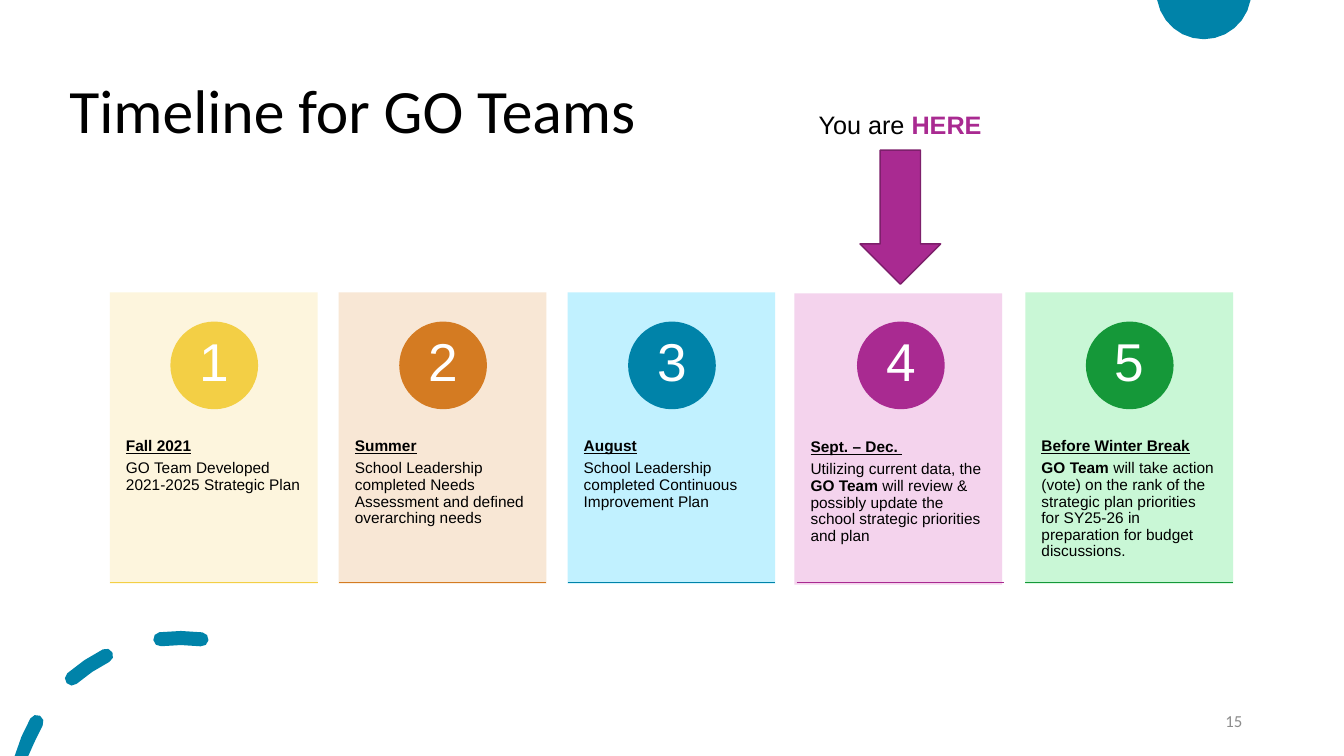
"""Build the GO Teams timeline slide."""
from math import cos, radians, sin

from lxml import etree
from pptx import Presentation
from pptx.dml.color import RGBColor
from pptx.enum.shapes import MSO_CONNECTOR, MSO_SHAPE
from pptx.enum.text import MSO_ANCHOR, MSO_AUTO_SIZE, PP_ALIGN
from pptx.oxml.ns import qn
from pptx.util import Inches, Pt

RECTANGLE, OVAL, DOWN_ARROW = MSO_SHAPE.RECTANGLE, MSO_SHAPE.OVAL, MSO_SHAPE.DOWN_ARROW
STRAIGHT = MSO_CONNECTOR.STRAIGHT
TOP, MIDDLE = MSO_ANCHOR.TOP, MSO_ANCHOR.MIDDLE
FIXED, GROW = MSO_AUTO_SIZE.NONE, MSO_AUTO_SIZE.SHAPE_TO_FIT_TEXT
LEFT, CENTER, RIGHT = PP_ALIGN.LEFT, PP_ALIGN.CENTER, PP_ALIGN.RIGHT

COLORS = {
    "black": "000000", "white": "FFFFFF", "gray": "8C8C8C",
    "yellow": "F3CF45", "pale yellow": "FDF5DA",
    "orange": "D47B22", "pale orange": "F8E5D1",
    "blue": "0083A9", "pale blue": "BBF0FF",
    "purple": "A92A91", "pale purple": "F3CFEC", "dark purple": "7D1F6B",
    "green": "159839", "pale green": "C4F7D2",
}
SLIDE_WIDTH, SLIDE_HEIGHT = 13.33, 7.5
CARD_LEFT, CARD_TOP, CARD_PITCH = 1.09, 2.9, 2.27
CARD_WIDTH, CARD_HEIGHT = 2.06, 2.89
CIRCLE_SIZE, NUMBER_SIZE = 0.87, 0.61
HEADING = {"bold": True, "underline": True}
BOLD = {"bold": True}

STEPS = [
    ("yellow", "Fall 2021", [("GO Team Developed 2021-2025 Strategic Plan", {})], (0, 0)),
    ("orange", "Summer",
     [("School Leadership completed Needs Assessment and defined overarching needs", {})], (0, 0)),
    ("blue", "August",
     [("School Leadership completed Continuous Improvement Plan", {})], (0, 0)),
    ("purple", "Sept. – Dec. ",
     [("Utilizing current data, the ", {}), ("GO Team ", BOLD),
      ("will review & possibly update the school strategic priorities and plan", {})],
     (-0.02, 0.01)),
    ("green", "Before Winter Break",
     [("GO Team ", BOLD),
      ("will take action (vote) on the rank of the strategic plan priorities "
       "for SY25-26 in preparation for budget discussions.", {})], (0, 0)),
]


def rgb(name):
    """Return the named colour."""
    return RGBColor.from_string(COLORS[name])


def paint(shape, fill, line=None, opacity=None):
    """Set fill, outline and opacity, without a shadow."""
    shape.shadow.inherit = False
    shape.fill.solid()
    shape.fill.fore_color.rgb = rgb(fill)
    if opacity:
        color = shape.fill._xPr.find(qn("a:solidFill"))[0]
        etree.SubElement(color, qn("a:alpha"), val=str(opacity * 1000))
    if line:
        shape.line.color.rgb = rgb(line)
        shape.line.width = Pt(1)
    else:
        shape.line.fill.background()


def add_preset(slide, kind, box, fill, **style):
    """Add a painted preset shape."""
    shape = slide.shapes.add_shape(kind, *map(Inches, box))
    paint(shape, fill, **style)


def add_text(slide, box, paragraphs, size, font="Arial", color="black", align=LEFT,
             anchor=TOP, insets=(0.1, 0.05), line_spacing=1.0, space_after=0, fit=FIXED):
    """Add a text box from paragraphs of (text, format) runs."""
    frame = slide.shapes.add_textbox(*map(Inches, box)).text_frame
    frame.word_wrap = True
    frame.auto_size = fit
    frame.vertical_anchor = anchor
    frame.margin_left = frame.margin_right = Inches(insets[0])
    frame.margin_top = frame.margin_bottom = Inches(insets[1])
    for index, runs in enumerate(paragraphs):
        paragraph = frame.add_paragraph() if index else frame.paragraphs[0]
        paragraph.alignment = align
        paragraph.line_spacing = line_spacing
        paragraph.space_after = Pt(space_after)
        for text, style in runs:
            run = paragraph.add_run()
            run.text = text
            run.font.name = font
            run.font.size = Pt(size)
            run.font.bold = style.get("bold", False)
            run.font.underline = style.get("underline", False)
            run.font.color.rgb = rgb(style.get("color", color))


def add_rule(slide, left, top, width, color):
    """Add a thin horizontal line."""
    line = slide.shapes.add_connector(
        STRAIGHT, Inches(left), Inches(top), Inches(left + width), Inches(top))
    line.line.color.rgb = rgb(color)
    line.line.width = Pt(1)
    etree.SubElement(line._element.spPr, qn("a:effectLst"))


def arc(center, radius, start, end, steps=4):
    """Return points on an arc, with degrees clockwise from the top."""
    angles = [radians(start + (end - start) * step / steps) for step in range(steps + 1)]
    return [(center[0] + radius * sin(angle), center[1] - radius * cos(angle))
            for angle in angles]


def dash_contour(center, radius, half_width, start, end):
    """Return the contour of a curved dash with round ends."""
    start_center = arc(center, radius, start, start, 1)[0]
    end_center = arc(center, radius, end, end, 1)[0]
    return (arc(center, radius + half_width, start, end, 2)
            + arc(end_center, half_width, end, end + 180)[1:-1]
            + arc(center, radius - half_width, end, start, 2)
            + arc(start_center, half_width, start + 180, start + 360)[1:-1])


def add_outline(slide, contours, color):
    """Add one filled freeform of closed contours within the slide height."""
    contours = [[(Inches(x), Inches(min(max(y, 0), SLIDE_HEIGHT))) for x, y in contour]
                for contour in contours]
    builder = slide.shapes.build_freeform(*contours[0][0])
    for index, contour in enumerate(contours):
        if index:
            builder.move_to(*contour[0])
        builder.add_line_segments(contour[1:], close=True)
    paint(builder.convert_to_shape(), color)


def add_step(slide, index, color, heading, body, shift):
    """Add one numbered timeline card."""
    column = CARD_LEFT + index * CARD_PITCH
    left, top = column + shift[0], CARD_TOP + shift[1]
    add_preset(slide, RECTANGLE, (left, top, CARD_WIDTH, CARD_HEIGHT),
               "pale " + color, opacity=90)
    add_text(slide, (left, top + 1.09, CARD_WIDTH, 1.73), [[(heading, HEADING)], body],
             11, insets=(0.16, 0.36), line_spacing=0.9, space_after=3.85)
    circle_left = column + 0.6
    add_preset(slide, OVAL, (circle_left, 3.19, CIRCLE_SIZE, CIRCLE_SIZE), color)
    inset = (CIRCLE_SIZE - NUMBER_SIZE) / 2
    add_text(slide, (circle_left + inset, 3.18 + inset, NUMBER_SIZE, NUMBER_SIZE),
             [[(str(index + 1), {})]], 38, color="white", align=CENTER, anchor=MIDDLE,
             insets=(0.07, 0.01), line_spacing=0.9)
    add_rule(slide, column, 5.78, CARD_WIDTH, color)


def main():
    """Build and save the slide."""
    presentation = Presentation()
    presentation.slide_width = Inches(SLIDE_WIDTH)
    presentation.slide_height = Inches(SLIDE_HEIGHT)
    slide = presentation.slides.add_slide(presentation.slide_layouts[6])
    add_outline(slide, [arc((11.94, -0.08), 0.47, 100, 260, 12)], "blue")
    dash_angles = ((-74, -60.5), (-41, -26.7), (-7, 7.3))
    add_outline(slide, [dash_contour((1.79, 7.97), 1.64, 0.07, start, end)
                        for start, end in dash_angles], "blue")
    add_text(slide, (0.59, 0.4, 11.5, 1.45), [[("Timeline for GO Teams", {})]], 44,
             font="Calibri", anchor=MIDDLE, line_spacing=0.9)
    for index, step in enumerate(STEPS):
        add_step(slide, index, *step)
    add_text(slide, (9.42, 6.95, 3, 0.4), [[("15", {})]], 12, font="Calibri",
             color="gray", align=RIGHT, anchor=MIDDLE)
    add_preset(slide, DOWN_ARROW, (8.53, 1.49, 0.8, 1.33), "purple", line="dark purple")
    add_text(slide, (8.02, 1.04, 1.82, 0.4),
             [[("You are ", {}), ("HERE", {"bold": True, "color": "purple"})]], 18, fit=GROW)
    presentation.save("out.pptx")


if __name__ == "__main__":
    main()
